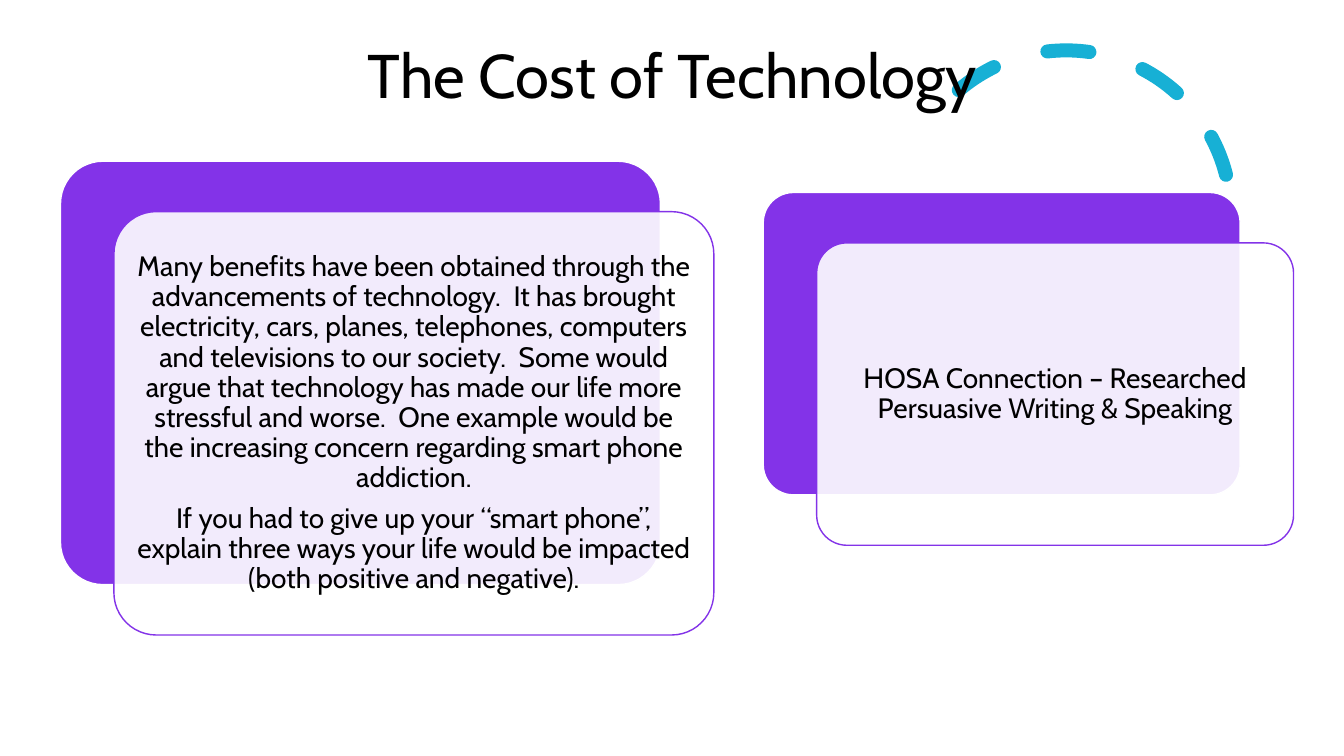
from lxml import etree
from pptx import Presentation
from pptx.dml.color import RGBColor
from pptx.enum.dml import MSO_LINE
from pptx.enum.shapes import MSO_SHAPE
from pptx.enum.text import MSO_ANCHOR, PP_ALIGN
from pptx.oxml.ns import qn
from pptx.util import Inches, Pt

ARC = MSO_SHAPE.ARC
ROUNDED = MSO_SHAPE.ROUNDED_RECTANGLE
DASH = MSO_LINE.DASH
TOP, MIDDLE = MSO_ANCHOR.TOP, MSO_ANCHOR.MIDDLE
CENTER = PP_ALIGN.CENTER

PURPLE, CYAN, WHITE, BLACK = "8333E8", "17B0D5", "FFFFFF", "000000"
CARD_SHIFT = (0.53, 0.5)
TITLE_FORMAT = {"alignment": CENTER, "line_spacing": 0.9}
CARD_FORMAT = {**TITLE_FORMAT, "space_after": Pt(7)}

CARDS = [
    ((0.6, 1.6, 5.95, 4.2), [
        "Many benefits have been obtained through the advancements of technology.  "
        "It has brought electricity, cars, planes, telephones, computers and "
        "televisions to our society.  Some would argue that technology has made our "
        "life more stressful and worse.  One example would be the increasing concern "
        "regarding smart phone addiction.",
        "If you had to give up your “smart phone”, explain three ways your life "
        "would be impacted (both positive and negative).",
    ]),
    ((7.57, 1.91, 4.73, 3), [
        "HOSA Connection – Researched Persuasive Writing & Speaking",
    ]),
]


def color(hex_value):
    return RGBColor.from_string(hex_value)


def set_attributes(target, values):
    for name, value in values.items():
        setattr(target, name, value)


def add_outlined_shape(slide, kind, box, line_color, line_width):
    shape = slide.shapes.add_shape(kind, *map(Inches, box))
    shape.shadow.inherit = False
    shape.line.color.rgb = color(line_color)
    shape.line.width = Pt(line_width)
    return shape


def add_panel(slide, box, fill_color, line_color):
    panel = add_outlined_shape(slide, ROUNDED, box, line_color, 1)
    panel.adjustments[0] = 0.1
    panel.fill.solid()
    panel.fill.fore_color.rgb = color(fill_color)
    return panel


def set_opacity(shape, percent):
    fill_color = shape.fill._xPr.find(qn("a:solidFill"))[0]
    etree.SubElement(fill_color, qn("a:alpha")).set("val", str(percent * 1000))


def write_text(shape, paragraphs, size, anchor, margin, paragraph_format):
    frame = shape.text_frame
    set_attributes(frame, {"word_wrap": True, "vertical_anchor": anchor})
    if margin is not None:
        sides = ("left", "top", "right", "bottom")
        set_attributes(frame, {f"margin_{side}": Inches(margin) for side in sides})
    frame.text = "\n".join(paragraphs)
    for paragraph in frame.paragraphs:
        set_attributes(paragraph, paragraph_format)
        set_attributes(paragraph.font, {"name": "Cabin", "size": Pt(size)})
        paragraph.font.color.rgb = color(BLACK)


def add_dashed_arc(slide):
    arc = add_outlined_shape(slide, ARC, (8.94, 0.5, 3.27, 3.27), CYAN, 10)
    arc.fill.background()
    arc.rotation = 345.8
    arc.adjustments[0] = 146.13
    arc.adjustments[1] = 0
    arc.line.dash_style = DASH
    arc.line._get_or_add_ln().set("cap", "rnd")


def add_title(slide, text):
    title = slide.shapes.add_textbox(*map(Inches, (0.92, 0.4, 11.5, 1.45)))
    write_text(title, [text], 44, TOP, None, TITLE_FORMAT)


def add_card(slide, box, paragraphs):
    left, top, width, height = box
    add_panel(slide, box, PURPLE, WHITE)
    front_box = (left + CARD_SHIFT[0], top + CARD_SHIFT[1], width, height)
    front = add_panel(slide, front_box, WHITE, PURPLE)
    set_opacity(front, 90)
    write_text(front, paragraphs, 20, MIDDLE, 0.08, CARD_FORMAT)


def main():
    presentation = Presentation()
    presentation.slide_width = Inches(13.33)
    presentation.slide_height = Inches(7.5)
    slide = presentation.slides.add_slide(presentation.slide_layouts[6])
    add_dashed_arc(slide)
    add_title(slide, "The Cost of Technology")
    for box, paragraphs in CARDS:
        add_card(slide, box, paragraphs)
    presentation.save("out.pptx")


if __name__ == "__main__":
    main()
